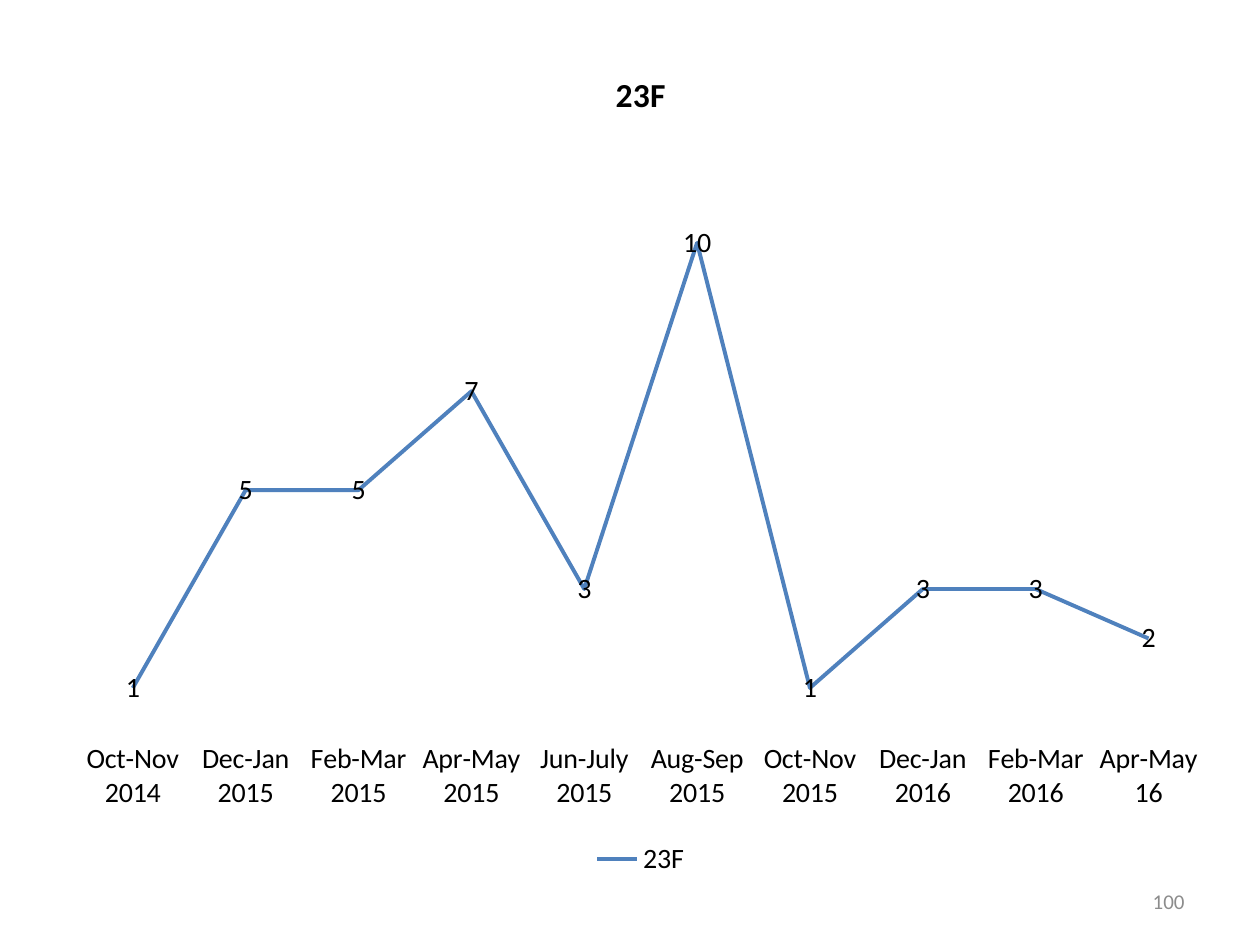
from pptx import Presentation
from pptx.chart.data import CategoryChartData
from pptx.dml.color import RGBColor
from pptx.enum.chart import XL_CHART_TYPE, XL_LABEL_POSITION, XL_LEGEND_POSITION, XL_MARKER_STYLE, XL_TICK_MARK
from pptx.enum.text import MSO_ANCHOR, PP_ALIGN
from pptx.util import Inches, Pt

LINE_CHART = XL_CHART_TYPE.LINE
LABEL_CENTER = XL_LABEL_POSITION.CENTER
LEGEND_BOTTOM = XL_LEGEND_POSITION.BOTTOM
NO_MARKER = XL_MARKER_STYLE.NONE
NO_TICK = XL_TICK_MARK.NONE
MIDDLE = MSO_ANCHOR.MIDDLE
RIGHT = PP_ALIGN.RIGHT

FONT = "Calibri"
BLACK = RGBColor(0x00, 0x00, 0x00)
BLUE = RGBColor(0x4F, 0x81, 0xBD)
GRAY = RGBColor(0x8C, 0x8C, 0x8C)


def style_font(font, size, color, bold=False):
    font.name = FONT
    font.size = Pt(size)
    font.bold = bold
    font.color.rgb = color


presentation = Presentation()
presentation.slide_width = Inches(10)
presentation.slide_height = Inches(7.5)
slide = presentation.slides.add_slide(presentation.slide_layouts[6])

# Slide number
number_box = slide.shapes.add_textbox(Inches(7.17), Inches(6.95), Inches(2.33), Inches(0.4))
number_frame = number_box.text_frame
number_frame.word_wrap = True
number_frame.vertical_anchor = MIDDLE
paragraph = number_frame.paragraphs[0]
paragraph.alignment = RIGHT
run = paragraph.add_run()
run.text = "100"
style_font(run.font, 12, GRAY)

# Cases per two-month period
chart_data = CategoryChartData()
chart_data.categories = [
    "Oct-Nov 2014", "Dec-Jan 2015", "Feb-Mar 2015", "Apr-May 2015", "Jun-July 2015",
    "Aug-Sep 2015", "Oct-Nov 2015", "Dec-Jan 2016", "Feb-Mar 2016", "Apr-May 16",
]
chart_data.add_series("23F", [1, 5, 5, 7, 3, 10, 1, 3, 3, 2])
chart = slide.shapes.add_chart(
    LINE_CHART, Inches(0.42), Inches(0.33), Inches(9.33), Inches(6.67), chart_data
).chart
style_font(chart.font, 16, BLACK)

chart.has_title = True
title_run = chart.chart_title.text_frame.paragraphs[0].add_run()
title_run.text = "23F"
style_font(title_run.font, 19.2, BLACK, bold=True)
chart.chart_title.include_in_layout = False

chart.has_legend = True
chart.legend.position = LEGEND_BOTTOM
chart.legend.include_in_layout = False

category_axis = chart.category_axis
category_axis.major_tick_mark = NO_TICK
category_axis.minor_tick_mark = NO_TICK
category_axis.format.line.fill.background()

value_axis = chart.value_axis
value_axis.minimum_scale = 0
value_axis.maximum_scale = 12
value_axis.has_major_gridlines = False
value_axis.visible = False

plot = chart.plots[0]
plot.vary_by_categories = False
series = plot.series[0]
series.smooth = False
series.marker.style = NO_MARKER
series.format.line.color.rgb = BLUE
series.format.line.width = Pt(2.25)
labels = series.data_labels
labels.show_value = True
labels.position = LABEL_CENTER
style_font(labels.font, 16, BLACK)

presentation.save("out.pptx")
